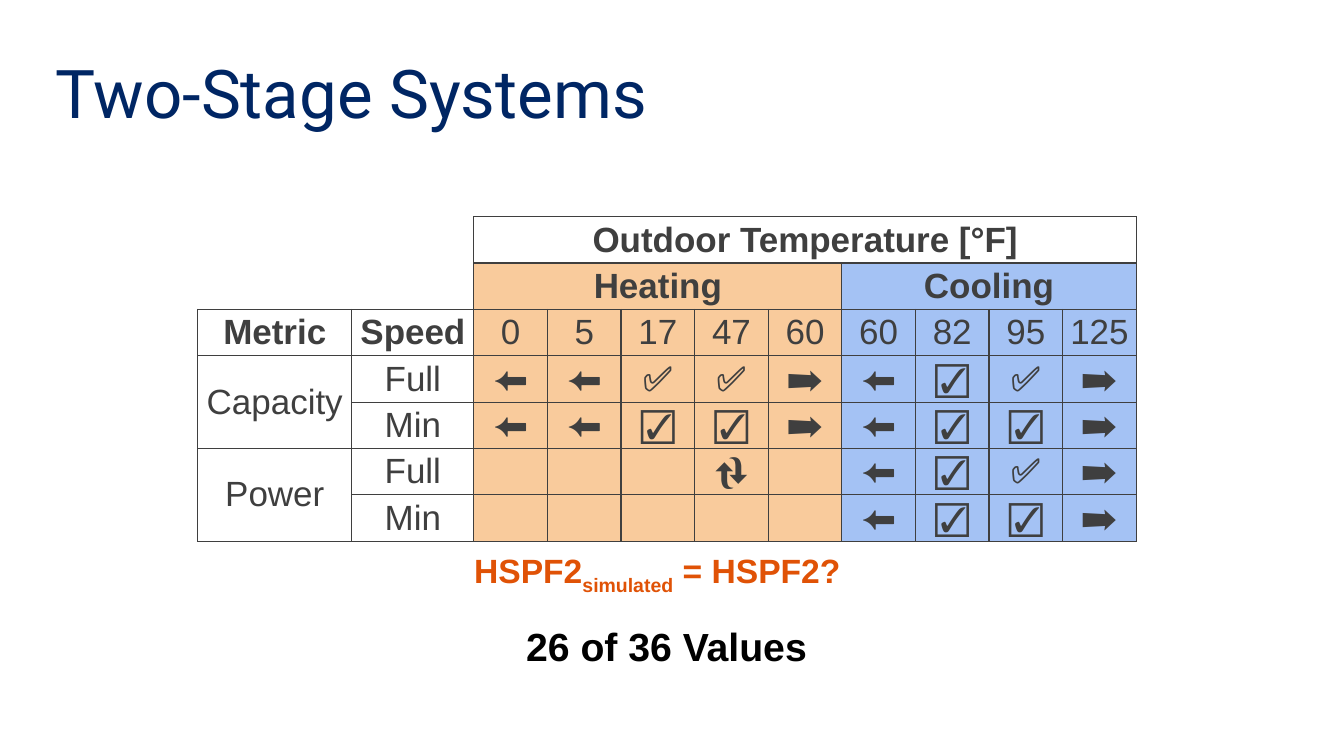
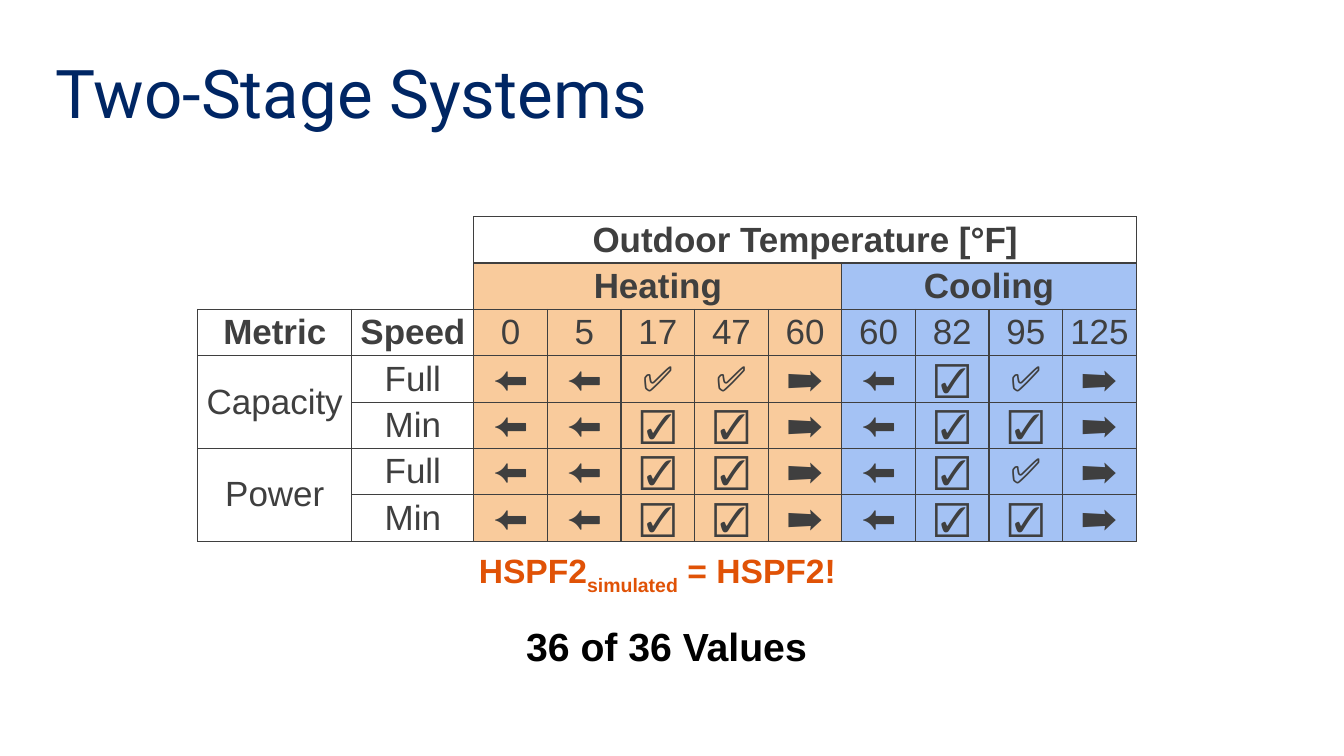
from dataclasses import dataclass

from lxml.etree import SubElement
from pptx import Presentation
from pptx.dml.color import RGBColor
from pptx.enum.text import MSO_ANCHOR, MSO_AUTO_SIZE, PP_ALIGN
from pptx.oxml.ns import qn
from pptx.util import Pt

PX = 9144
NO_STYLE = "{2D5ABB26-0587-4C30-8999-92F81FD0307C}"


def px(length):
    return length * PX


@dataclass(frozen=True)
class Theme:
    title_font: str = "Roboto"
    body_font: str = "Arial"
    title: str = "002664"
    grid: str = "3F3F3F"
    heating: str = "F9CB9C"
    cooling: str = "A4C2F4"
    accent: str = "E05206"
    black: str = "000000"
    title_size: int = 48
    table_size: int = 25
    equation_size: int = 24
    total_size: int = 28
    border: int = 1


MARKS = {"<": "⬅️", ">": "➡️", "v": "✅", "x": "☑️", "o": "🔃"}
TEMPERATURES = ["0", "5", "17", "47", "60", "60", "82", "95", "125"]
HEADER = [
    ["", "", "Outdoor Temperature [°F]"] + [""] * 8,
    ["", "", "Heating"] + [""] * 4 + ["Cooling"] + [""] * 3,
    ["Metric", "Speed"] + TEMPERATURES,
]
ROW_LABELS = [("Capacity", "Full"), ("", "Min"), ("Power", "Full"), ("", "Min")]
MERGES = [(0, 2, 0, 10), (1, 2, 1, 6), (1, 7, 1, 10), (3, 0, 4, 0), (5, 0, 6, 0)]
FIRST_HEATING, FIRST_COOLING = 2, 7
COLUMN_WIDTHS = [153, 121] + [73] * len(TEMPERATURES)
ROW_HEIGHT = 46

CAPACITY = ["<<vv><xv>", "<<xx><xx>"]
STAGES = [
    (CAPACITY + ["   o <xv>", "     <xx>"], "?", "26 of 36 Values"),
    (CAPACITY + ["<<xx><xv>", "<<xx><xx>"], "!", "36 of 36 Values"),
]


class Deck:
    def __init__(self, theme):
        self.theme = theme
        self.presentation = Presentation()
        self.presentation.slide_width = px(1333)
        self.presentation.slide_height = px(750)
        self.slide = None

    def add_slide(self, title):
        layout = self.presentation.slide_layouts[5]
        self.slide = self.presentation.slides.add_slide(layout)
        shape = self.slide.shapes.title
        shape.left, shape.top, shape.width, shape.height = map(px, (45, 45, 1242, 91))
        frame = shape.text_frame
        frame.auto_size = MSO_AUTO_SIZE.SHAPE_TO_FIT_TEXT
        paragraph = frame.paragraphs[0]
        paragraph.alignment = PP_ALIGN.LEFT
        self.add_run(paragraph, title, self.theme.title_size, self.theme.title,
                     font=self.theme.title_font)

    def add_run(self, paragraph, text, size, color, bold=False, font=None, baseline=0):
        run = paragraph.add_run()
        run.text = text
        run.font.name = font or self.theme.body_font
        run.font.size = Pt(size)
        run.font.bold = bold
        run.font.color.rgb = RGBColor.from_string(color)
        if baseline:
            run._r.get_or_add_rPr().set("baseline", str(baseline * 1000))

    def add_text(self, box, runs, size, color, wrap=True):
        frame = self.slide.shapes.add_textbox(*map(px, box)).text_frame
        frame.word_wrap = wrap
        frame.auto_size = MSO_AUTO_SIZE.SHAPE_TO_FIT_TEXT
        paragraph = frame.paragraphs[0]
        paragraph.alignment = PP_ALIGN.CENTER
        for text, baseline in runs:
            self.add_run(paragraph, text, size, color, bold=True, baseline=baseline)

    def add_table(self, left, top, rows):
        width, height = sum(COLUMN_WIDTHS), ROW_HEIGHT * len(rows)
        frame = self.slide.shapes.add_table(
            len(rows), len(COLUMN_WIDTHS), *map(px, (left, top, width, height)))
        table = frame.table
        table.first_row = table.horz_banding = False
        table._tbl.tblPr.find(qn("a:tableStyleId")).text = NO_STYLE
        for column, column_width in zip(table.columns, COLUMN_WIDTHS):
            column.width = px(column_width)
        for row_index, row in enumerate(rows):
            table.rows[row_index].height = px(ROW_HEIGHT)
            for column_index, text in enumerate(row):
                self.style_cell(table.cell(row_index, column_index),
                                row_index, column_index, text)
        for first_row, first_column, last_row, last_column in MERGES:
            table.cell(first_row, first_column).merge(table.cell(last_row, last_column))

    def style_cell(self, cell, row, column, text):
        cell.margin_left = cell.margin_right = px(3)
        cell.margin_top = cell.margin_bottom = px(2)
        cell.vertical_anchor = MSO_ANCHOR.MIDDLE
        if row == 0 or column < FIRST_HEATING:
            cell.fill.background()
        else:
            cell.fill.solid()
            cell.fill.fore_color.rgb = RGBColor.from_string(
                self.theme.heating if column < FIRST_COOLING else self.theme.cooling)
        sides = "LRTB"
        if row < 2 and column < FIRST_HEATING:
            sides = ("R" if column == 1 else "") + ("B" if row == 1 else "")
        self.add_borders(cell, sides)
        if text:
            paragraph = cell.text_frame.paragraphs[0]
            paragraph.alignment = PP_ALIGN.CENTER
            bold = row < 2 or (row == 2 and column < FIRST_HEATING)
            self.add_run(paragraph, text, self.theme.table_size, self.theme.grid, bold)

    def add_borders(self, cell, sides):
        properties = cell._tc.get_or_add_tcPr()
        for position, side in enumerate(sides):
            line = SubElement(properties, qn(f"a:ln{side}"), w=str(Pt(self.theme.border)))
            fill = SubElement(line, qn("a:solidFill"))
            SubElement(fill, qn("a:srgbClr"), val=self.theme.grid)
            properties.insert(position, line)


def main():
    theme = Theme()
    deck = Deck(theme)
    for marks, ending, total in STAGES:
        deck.add_slide("Two-Stage Systems")
        body = [[*labels, *(MARKS.get(mark, "") for mark in line)]
                for labels, line in zip(ROW_LABELS, marks)]
        deck.add_table(196, 215, HEADER + body)
        deck.add_text((509, 612, 304, 57), [(total, 0)],
                      theme.total_size, theme.black, wrap=False)
        deck.add_text((405, 541, 494, 50),
                      [("HSPF2", 0), ("simulated", -25), (f" = HSPF2{ending}", 0)],
                      theme.equation_size, theme.accent)
    deck.presentation.save("out.pptx")


if __name__ == "__main__":
    main()
